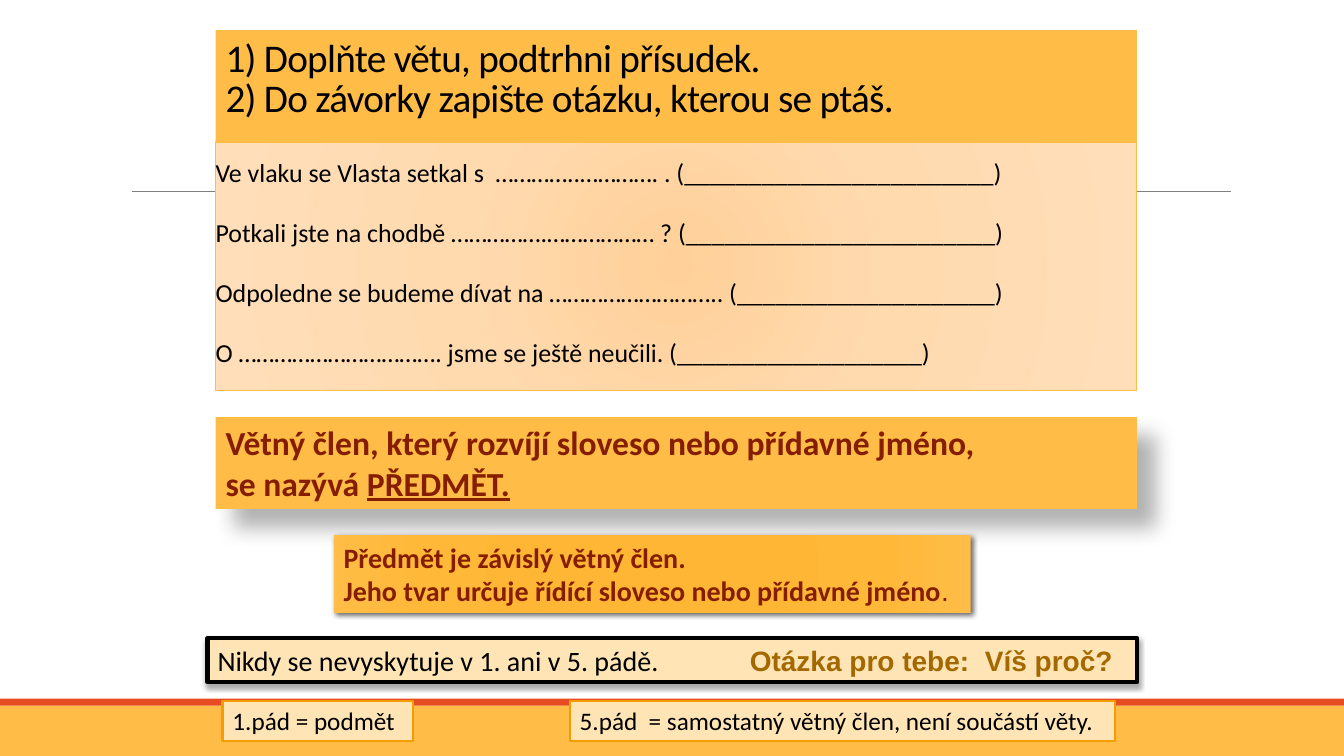
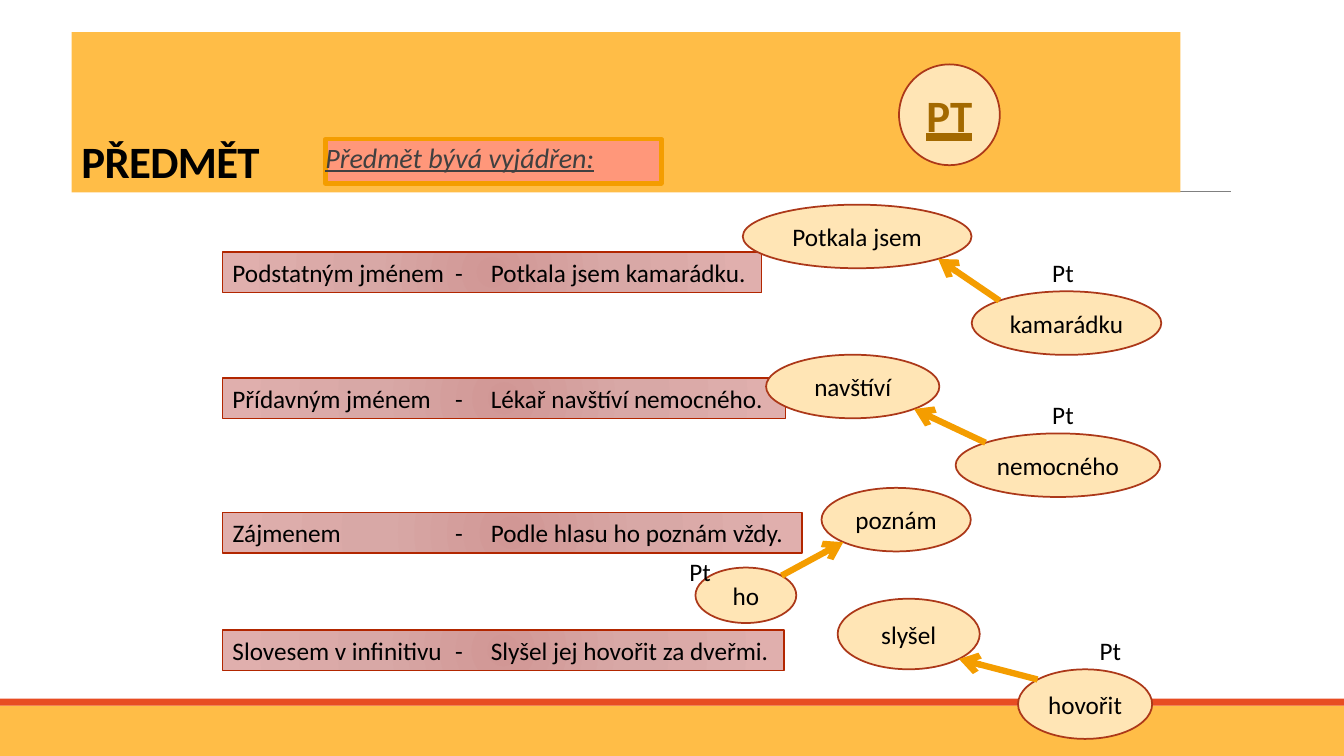
import lxml.etree
import pptx
import pptx.dml.color
import pptx.enum.shapes
import pptx.enum.text
import pptx.oxml.ns
import pptx.util

Pt = pptx.util.Pt
qn = pptx.oxml.ns.qn
SHAPES = pptx.enum.shapes.MSO_SHAPE
ANCHOR = pptx.enum.text.MSO_ANCHOR
ALIGN = pptx.enum.text.PP_ALIGN
UNDERLINE = pptx.enum.text.MSO_UNDERLINE

COLORS = {
    "black": "000000", "gray": "808080", "dark gray": "404040",
    "gold": "FFBD47", "red": "E84C22", "cream": "FFE5B5",
    "orange": "F49D00", "salmon": "FF977A", "rust": "AC3819",
    "brick": "B22600", "maroon": "851D00", "bronze": "A36900",
}
# Gradient stops: position in percent, colour
PEACH = [(0, "FFD099"), (45, "FFDAAF"), (100, "FFDEB9")]
AMBER = [(0, "FFB531"), (34, "FFB634"), (70, "FFB838"), (100, "FFBD47")]
ROSE = [(0, "D19795"), (45, "D8A8A6"), (100, "E0AFAD")]

# Sentence part, example, box top and width
SENTENCES = [
    ("Podstatným jménem", "Potkala jsem kamarádku.", 180, 385),
    ("Přídavným jménem", "Lékař navštíví nemocného.", 270, 402),
    ("Zájmenem", "Podle hlasu ho poznám vždy.", 366, 414),
    ("Slovesem v infinitivu", "Slyšel jej hovořit za dveřmi.", 450, 401),
]
# Verb and its box, object and its box, left and top of the object's label
PAIRS = [
    ("Potkala jsem", (530.6, 146.2, 163.4, 45.4),
     "kamarádku", (694.1, 208.1, 135.4, 45.4), (744.5, 180)),
    ("navštíví", (547.2, 253.4, 123.8, 45.4),
     "nemocného", (682.6, 309.6, 146.2, 45.4), (744.5, 281.5)),
    ("poznám", (586.8, 348.5, 106.6, 45.4),
     "ho", (496.8, 405.4, 72, 39.6), (485.3, 393.8)),
    ("slyšel", (598.3, 427.7, 101.5, 50.4),
     "hovořit", (727.2, 478.1, 95.8, 49.7), (778.3, 450)),
]


def rgb(name):
    return pptx.dml.color.RGBColor.from_string(COLORS[name])


def sub(parent, tag, **attributes):
    return lxml.etree.SubElement(parent, qn(tag), attributes)


# Shapes and lines
def add_box(slide, box, fill, line=None, width=1, kind=SHAPES.RECTANGLE, shadow=None):
    """fill is a colour name or a list of stops; shadow is opacity, blur, distance, angle."""
    shape = slide.shapes.add_shape(kind, *map(Pt, box))
    if isinstance(fill, str):
        shape.fill.solid()
        shape.fill.fore_color.rgb = rgb(fill)
    else:
        fill_radial(shape, fill)
    if line:
        shape.line.color.rgb = rgb(line)
        shape.line.width = Pt(width)
    else:
        shape.line.fill.background()
    shape.shadow.inherit = False
    if shadow:
        cast_shadow(shape, *shadow)
    return shape


def fill_radial(shape, stops):
    shape.fill.gradient()
    gradient = shape._element.spPr.find(qn("a:gradFill"))
    gradient.clear()
    stop_list = sub(gradient, "a:gsLst")
    for position, color in stops:
        stop = sub(stop_list, "a:gs", pos=str(position * 1000))
        sub(stop, "a:srgbClr", val=color)
    circle = sub(gradient, "a:path", path="circle")
    sub(circle, "a:fillToRect", **dict.fromkeys("ltrb", "100000"))


def cast_shadow(shape, opacity, blur, distance, angle):
    effects = shape._element.spPr.find(qn("a:effectLst"))
    outer = sub(effects, "a:outerShdw", blurRad=str(int(Pt(blur))),
                dist=str(int(Pt(distance))), dir=str(angle * 60000),
                algn="tl", rotWithShape="0")
    color = sub(outer, "a:srgbClr", val=COLORS["black"])
    sub(color, "a:alpha", val=str(opacity * 1000))


def add_line(slide, start, end, color, width, arrow=False):
    line = slide.shapes.add_connector(
        pptx.enum.shapes.MSO_CONNECTOR.STRAIGHT, *map(Pt, (*start, *end)))
    line.line.color.rgb = rgb(color)
    line.line.width = Pt(width)
    if arrow:
        sub(line.line._get_or_add_ln(), "a:tailEnd", type="arrow")
    sub(line._element.spPr, "a:effectLst")


# Text
def style_run(run, size, color="black", bold=False, italic=False,
              underline=False, font="Calibri", spacing=None):
    run.font.name = font
    run.font.size = Pt(size)
    run.font.color.rgb = rgb(color)
    run.font.bold = bold
    run.font.italic = italic
    run.font.underline = underline
    if spacing:
        run._r.get_or_add_rPr().set("spc", str(int(spacing * 100)))


def write(shape, text, size, anchor=ANCHOR.TOP, align=ALIGN.LEFT,
          insets=(7.2, 3.6, 0, 3.6), line_spacing=None, **style):
    frame = shape.text_frame
    frame.text = text
    frame.word_wrap = True
    frame.vertical_anchor = anchor
    (frame.margin_left, frame.margin_top,
     frame.margin_right, frame.margin_bottom) = map(Pt, insets)
    for paragraph in frame.paragraphs:
        paragraph.alignment = align
        if line_spacing:
            paragraph.line_spacing = line_spacing
        for run in paragraph.runs:
            style_run(run, size, **style)
    return frame


def append_run(paragraph, text, size, **style):
    run = paragraph.add_run()
    run.text = text
    style_run(run, size, **style)


def set_tabs(paragraph, *positions):
    tabs = sub(paragraph._p.get_or_add_pPr(), "a:tabLst")
    for position in positions:
        sub(tabs, "a:tab", pos=str(int(Pt(position))), algn="l")


def write_body(shape, text, size, line_spacing, **style):
    frame = write(shape, text, size, insets=(0, 3.6, 0, 3.6),
                  line_spacing=line_spacing, **style)
    for paragraph in frame.paragraphs:
        paragraph.space_before = Pt(12)
        paragraph.space_after = Pt(2)
        properties = paragraph._p.get_or_add_pPr()
        properties.set("marL", str(int(Pt(7.2))))
        properties.set("indent", str(int(Pt(-7.2))))


# Parts shared by the slides
def add_slide(presentation):
    slide = presentation.slides.add_slide(presentation.slide_layouts[6])
    add_box(slide, (0, 504, 960, 36), "gold")
    add_box(slide, (0, 499, 960, 5), "red")
    add_line(slide, (94.3, 136.8), (879, 136.8), "gray", 0.5)
    return slide


def add_title(slide, box, text, size, bottom=3.6, bold=False):
    write(add_box(slide, box, "gold"), text, size, anchor=ANCHOR.BOTTOM,
          insets=(7.2, 3.6, 7.2, bottom), line_spacing=0.85, bold=bold, spacing=-0.5)


def add_bubble(slide, box, text, size=18, **style):
    bubble = add_box(slide, box, "cream", "rust", 1.25, SHAPES.OVAL)
    write(bubble, text, size, anchor=ANCHOR.MIDDLE, align=ALIGN.CENTER,
          insets=(0, 0, 0, 0), **style)


def diagonal_point(box, right, bottom):
    """The point of an ellipse at 45 degrees, towards the given corner."""
    left, top, width, height = box
    return (left + width * (0.854 if right else 0.146),
            top + height * (0.854 if bottom else 0.146))


# Slides
def build_exercise(presentation):
    slide = add_slide(presentation)
    add_title(slide, (154, 21.6, 658, 96.5),
              "1) Doplňte větu, podtrhni přísudek.\v"
              "2) Do závorky zapište otázku, kterou se ptáš.", 28, bottom=32)

    exercise = add_box(slide, (154, 101.5, 658, 177.5), PEACH, "gold")
    write_body(exercise, "\n".join([
        "Ve vlaku se Vlasta setkal s  …………..…………. . (________________________)",
        "Potkali jste na chodbě …………….……………… ? (________________________)",
        "Odpoledne se budeme dívat na ……………………….. (____________________)",
        "O ……………………………. jsme se ještě neučili. (___________________)",
    ]), 18.5, line_spacing=1.3)

    definition = add_box(slide, (154, 298, 658, 65.5), "gold", shadow=(30, 15, 18, 45))
    frame = write(definition, "Větný člen, který rozvíjí sloveso nebo přídavné jméno,\n"
                  "se nazývá ", 24, color="maroon", bold=True)
    append_run(frame.paragraphs[1], "PŘEDMĚT.", 24, color="maroon", bold=True,
               underline=True)

    dependence = add_box(slide, (238.3, 382.3, 455, 55.5), AMBER, shadow=(60, 3.5, 2, 45))
    frame = write(dependence, "Předmět je závislý větný člen.\n"
                  "Jeho tvar určuje řídící sloveso nebo přídavné jméno", 20,
                  color="maroon", bold=True)
    append_run(frame.paragraphs[1], ".", 20, color="maroon", font="Arial")

    question = add_box(slide, (148.3, 455.8, 664, 31.5), "cream", "black", 3,
                       shadow=(32, 3.5, 2.2, 90))
    frame = write(question, "Nikdy se nevyskytuje v 1. ani v 5. pádě.\t", 20)
    set_tabs(frame.paragraphs[0], 380.2)
    append_run(frame.paragraphs[0], "Otázka pro tebe:  Víš proč?", 20,
               color="bronze", bold=True, font="Arial")

    for left, width, answer in [
            (159, 136, "1.pád = podmět"),
            (407, 389.5, "5.pád  = samostatný větný člen, není součástí věty.")]:
        write(add_box(slide, (left, 500.4, width, 29), "cream", "orange", 1.5), answer, 18)


def build_overview(presentation):
    slide = add_slide(presentation)
    add_title(slide, (51.1, 23, 792, 114.5), "PŘEDMĚT", 32, bold=True)
    subtitle = add_box(slide, (232.5, 99.4, 240, 31.7), "salmon", "orange", 3)
    write_body(subtitle, "Předmět bývá vyjádřen:", 20, line_spacing=0.9,
               color="dark gray", italic=True, underline=True)
    add_bubble(slide, (642.2, 46, 72, 72), "PT", 32, color="bronze", bold=True,
               underline=UNDERLINE.HEAVY_LINE)

    for part, example, top, width in SENTENCES:
        sentence = add_box(slide, (159, top, width, 29), ROSE, "brick")
        frame = write(sentence, f"{part}\t-\t{example}", 18)
        set_tabs(frame.paragraphs[0], 159, 184.5)

    for verb, verb_box, noun, noun_box, label_corner in PAIRS:
        add_bubble(slide, verb_box, verb)
        add_bubble(slide, noun_box, noun)
        verb_is_right = verb_box[0] > noun_box[0]
        add_line(slide, diagonal_point(noun_box, verb_is_right, False),
                 diagonal_point(verb_box, not verb_is_right, True),
                 "orange", 4.5, arrow=True)
        label = slide.shapes.add_textbox(*map(Pt, (*label_corner, 30, 29)))
        write(label, "Pt", 18)


def main():
    presentation = pptx.Presentation()
    presentation.slide_width = Pt(960)
    presentation.slide_height = Pt(540)
    build_exercise(presentation)
    build_overview(presentation)
    presentation.save("out.pptx")


if __name__ == "__main__":
    main()
